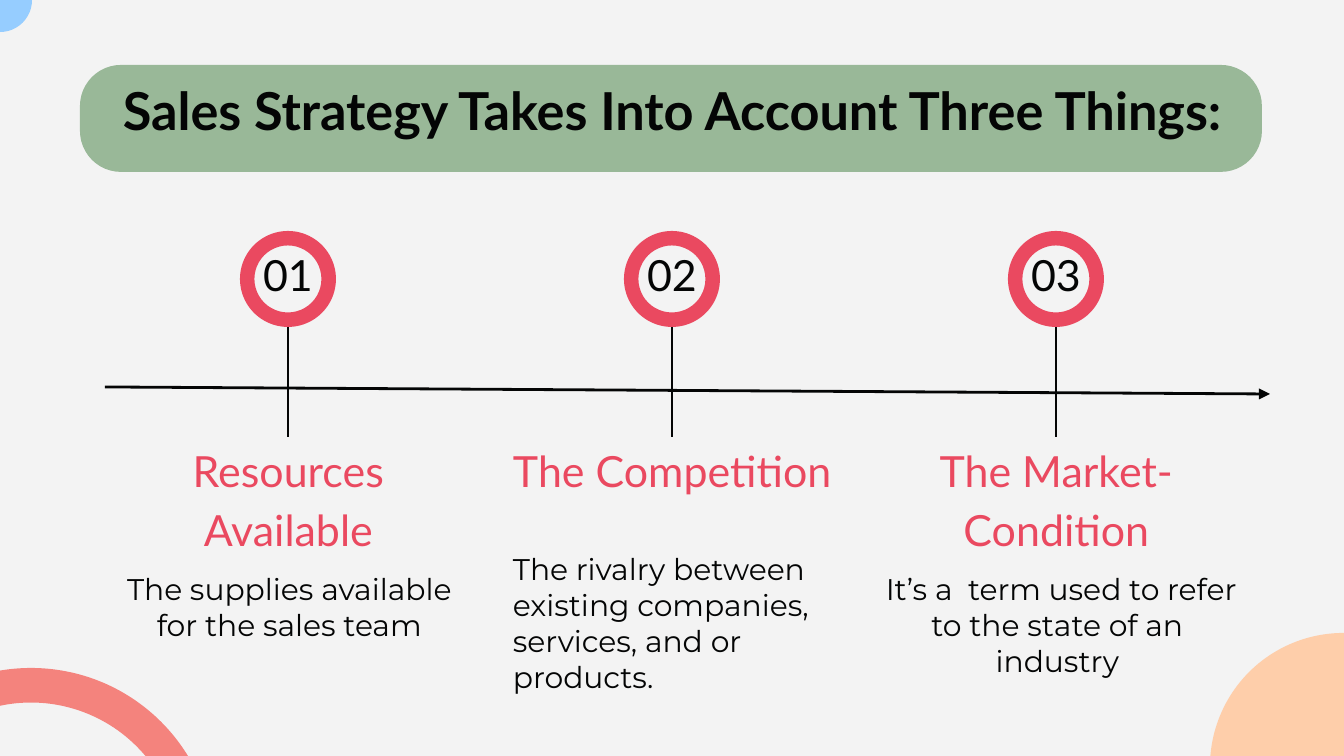
import pptx
import pptx.dml.color
import pptx.enum.shapes
import pptx.enum.text
import pptx.oxml
import pptx.oxml.ns
import pptx.util

SHAPE = pptx.enum.shapes.MSO_SHAPE
ALIGN = pptx.enum.text.PP_ALIGN
ANCHOR = pptx.enum.text.MSO_ANCHOR

COLORS = {
    "background": "F3F3F3", "green": "99B898", "coral": "F4837D", "blue": "96CDFF",
    "peach": "FECEAA", "red": "EA4960", "ink": "040505",
}
TITLE = "Sales Strategy Takes Into Account Three Things:"
# number, heading, description, description box (left, top), alignment
STEPS = [
    ("01", "Resources Available", "The supplies available for the sales team", (108, 571), ALIGN.CENTER),
    ("02", "The Competition", "The rivalry between existing companies, services, and or products.",
     (513, 551), ALIGN.LEFT),
    ("03", "The Market-Condition", " It’s a  term used to refer to the state of an industry",
     (876, 571), ALIGN.CENTER),
]
# preset, box, colour, adjustments
DECORATIONS = [
    (SHAPE.ROUNDED_RECTANGLE, (80, 65, 1182, 107), "green", [0.384]),
    (SHAPE.BLOCK_ARC, (-153, 668, 368, 368), "coral", [108, 0.44, 0.094]),
    (SHAPE.OVAL, (-32, -32, 64, 64), "blue", []),
    (SHAPE.OVAL, (1210, 633, 267, 267), "peach", []),
]
FIRST_CENTER, STEP_GAP = 288, 384
RING_TOP, RING_SIZE = 231, 96
STEM_BOTTOM = 437
TEXT_WIDTH = 363


def px(value):
    return round(value * 914400 / 134.4)


def color(name):
    return pptx.dml.color.RGBColor.from_string(COLORS[name])


def add_filled_shape(preset, box, fill, adjustments):
    shape = slide.shapes.add_shape(preset, *map(px, box))
    shape.shadow.inherit = False
    shape.fill.solid()
    shape.fill.fore_color.rgb = color(fill)
    shape.line.fill.background()
    for index, value in enumerate(adjustments):
        shape.adjustments[index] = value


def add_line(start, end, arrow=False):
    line = slide.shapes.add_connector(
        pptx.enum.shapes.MSO_CONNECTOR.STRAIGHT, *map(px, start + end))
    line.line.color.rgb = color("ink")
    line.line.width = pptx.util.Pt(1.5)
    properties = line._element.spPr
    if arrow:
        head = pptx.oxml.parse_xml(
            f'<a:tailEnd {pptx.oxml.ns.nsdecls("a")} type="triangle"/>')
        line.line._get_or_add_ln().append(head)
    properties.append(pptx.oxml.parse_xml(f'<a:effectLst {pptx.oxml.ns.nsdecls("a")}/>'))


def add_text(text, box, size, font="Lato", fill="ink", bold=False, align=ALIGN.CENTER,
             anchor=ANCHOR.TOP, spacing=1.0, after=0):
    frame = slide.shapes.add_textbox(*map(px, box)).text_frame
    frame.word_wrap = True
    frame.vertical_anchor = anchor
    frame.margin_left = frame.margin_right = frame.margin_top = frame.margin_bottom = 0
    paragraph = frame.paragraphs[0]
    paragraph.alignment = align
    paragraph.line_spacing = spacing
    paragraph.space_after = pptx.util.Pt(after)
    run = paragraph.add_run()
    run.text = text
    run.font.name = font
    run.font.size = pptx.util.Pt(size)
    run.font.bold = bold
    run.font.color.rgb = color(fill)


presentation = pptx.Presentation()
presentation.slide_width = px(1344)
presentation.slide_height = px(756)
slide = presentation.slides.add_slide(presentation.slide_layouts[6])
slide.background.fill.solid()
slide.background.fill.fore_color.rgb = color("background")

for decoration in DECORATIONS:
    add_filled_shape(*decoration)
add_text(TITLE, (105, 90, 1134, 63), 28, bold=True, spacing=0.8)

for index, (number, heading, description, corner, align) in enumerate(STEPS):
    center = FIRST_CENTER + index * STEP_GAP
    ring_box = (center - RING_SIZE // 2, RING_TOP, RING_SIZE, RING_SIZE)
    add_filled_shape(SHAPE.DONUT, ring_box, "red", [0.151])
    add_line((center, RING_TOP + RING_SIZE), (center, STEM_BOTTOM))
    add_text(number, (center - 41, 246, 82, 66), 23, anchor=ANCHOR.MIDDLE, spacing=0.8)
    add_text(heading, (center - TEXT_WIDTH // 2, STEM_BOTTOM, TEXT_WIDTH, 46), 23,
             fill="red", spacing=1.15, after=12)
    add_text(description, (*corner, TEXT_WIDTH, 75), 16, font="Montserrat", align=align, after=12)

add_line((105, 387), (1270, 394), arrow=True)

presentation.save("out.pptx")
